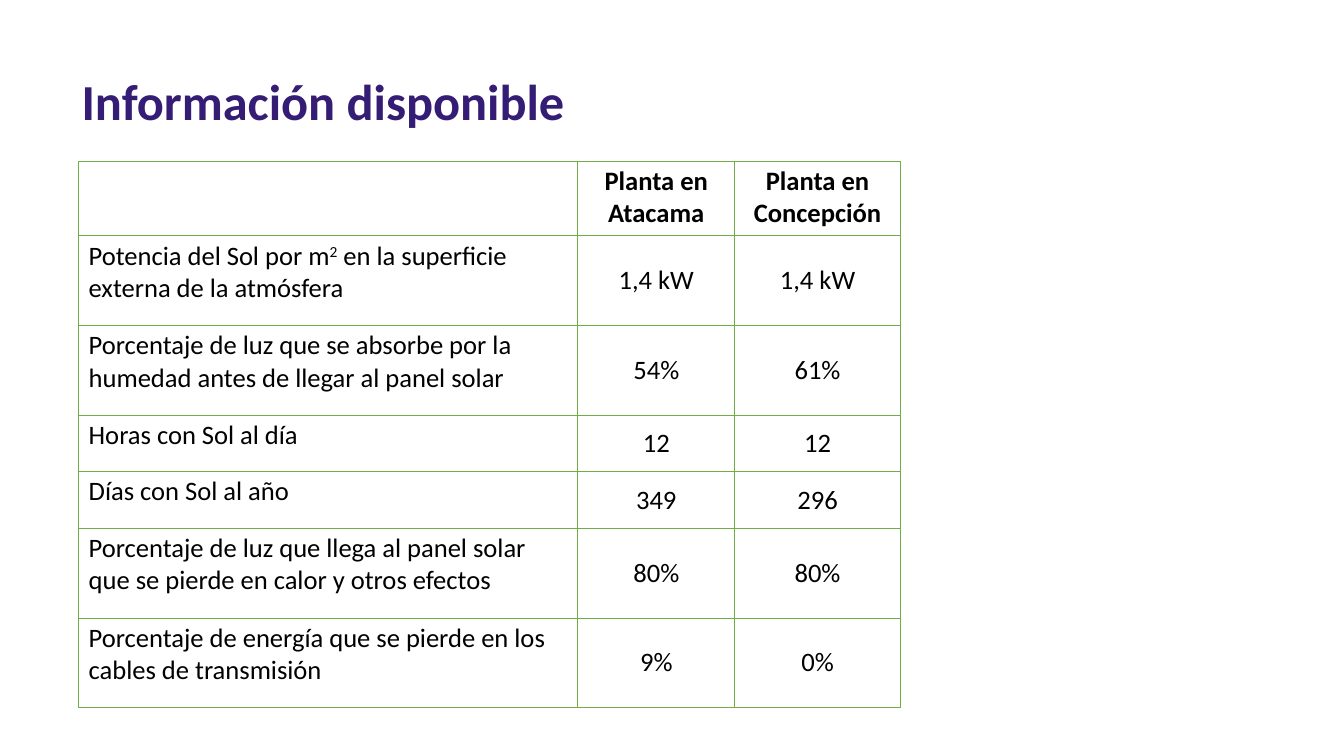
from dataclasses import dataclass

import lxml.etree
import pptx
import pptx.dml.color
import pptx.enum.text
import pptx.oxml.ns
import pptx.util

SLIDE_WIDTH = pptx.util.Inches(13.33)
SLIDE_HEIGHT = pptx.util.Inches(7.5)


@dataclass(frozen=True)
class Theme:
    font: str = "Calibri"
    title_color: str = "351C75"
    text_color: str = "000000"
    border_color: str = "70AD47"
    title_size: float = 36
    table_size: float = 19
    border_width: float = 0.75


THEME = Theme()

# Shares of the slide, in percent
TITLE_BOX = (5.33, 8.67, 64.43, 9.47)
TABLE_LEFT, TABLE_TOP = 5.85, 21.33
COLUMN_WIDTHS = (37.13, 11.7, 12.3)
HEADER_HEIGHT, ONE_LINE, TWO_LINES = 9.87, 7.47, 11.87

PLANTS = ("Planta en Atacama", "Planta en Concepción")
SUPERSCRIPT = "^"  # marks a run to be raised
FACTS = (
    (TWO_LINES, ("Potencia del Sol por m", "^2",
                 " en la superficie externa de la atmósfera"), "1,4 kW", "1,4 kW"),
    (TWO_LINES, ("Porcentaje de luz que se absorbe por la humedad "
                 "antes de llegar al panel solar",), "54%", "61%"),
    (ONE_LINE, ("Horas con Sol al día",), "12", "12"),
    (ONE_LINE, ("Días con Sol al año",), "349", "296"),
    (TWO_LINES, ("Porcentaje de luz que llega al panel solar "
                 "que se pierde en calor y otros efectos",), "80%", "80%"),
    (TWO_LINES, ("Porcentaje de energía que se pierde en los "
                 "cables de transmisión",), "9%", "0%"),
)


def across(percent):
    return round(SLIDE_WIDTH * percent / 100)


def down(percent):
    return round(SLIDE_HEIGHT * percent / 100)


def add_run(paragraph, text, size, color, bold=False):
    run = paragraph.add_run()
    run.text = text.removeprefix(SUPERSCRIPT)
    run.font.name = THEME.font
    run.font.size = pptx.util.Pt(size)
    run.font.bold = bold
    run.font.color.rgb = pptx.dml.color.RGBColor.from_string(color)
    if text.startswith(SUPERSCRIPT):
        run.font._element.set("baseline", "30000")


def add_title(slide, text):
    left, top, width, height = TITLE_BOX
    title = slide.shapes.add_textbox(across(left), down(top), across(width), down(height))
    title.text_frame.word_wrap = True
    add_run(title.text_frame.paragraphs[0], text, THEME.title_size, THEME.title_color, bold=True)


def draw_borders(cell):
    """Outline all four sides; border elements must precede the cell fill."""
    properties = cell._tc.get_or_add_tcPr()
    qn = pptx.oxml.ns.qn
    for position, side in enumerate(("lnL", "lnR", "lnT", "lnB")):
        border = lxml.etree.Element(qn(f"a:{side}"), w=str(pptx.util.Pt(THEME.border_width)))
        fill = lxml.etree.SubElement(border, qn("a:solidFill"))
        lxml.etree.SubElement(fill, qn("a:srgbClr"), val=THEME.border_color)
        properties.insert(position, border)


def fill_cell(cell, texts, centred=False, middle=False, bold=False):
    cell.fill.background()
    draw_borders(cell)
    cell.margin_left = cell.margin_right = pptx.util.Inches(0.1)
    cell.margin_top = cell.margin_bottom = pptx.util.Inches(0.04)
    anchors = pptx.enum.text.MSO_ANCHOR
    cell.vertical_anchor = anchors.MIDDLE if middle else anchors.TOP
    paragraph = cell.text_frame.paragraphs[0]
    if centred:
        paragraph.alignment = pptx.enum.text.PP_ALIGN.CENTER
    for text in texts:
        add_run(paragraph, text, THEME.table_size, THEME.text_color, bold)


def add_facts_table(slide):
    heights = [HEADER_HEIGHT] + [fact[0] for fact in FACTS]
    table = slide.shapes.add_table(
        len(heights), len(COLUMN_WIDTHS), across(TABLE_LEFT), down(TABLE_TOP),
        across(sum(COLUMN_WIDTHS)), down(sum(heights))).table
    table.first_row = table.horz_banding = False
    for column, width in zip(table.columns, COLUMN_WIDTHS):
        column.width = across(width)
    for row, height in zip(table.rows, heights):
        row.height = down(height)

    fill_cell(table.cell(0, 0), ())
    for column, plant in enumerate(PLANTS, 1):
        fill_cell(table.cell(0, column), (plant,), centred=True, bold=True)
    for row, (_, label, *values) in enumerate(FACTS, 1):
        fill_cell(table.cell(row, 0), label)
        for column, value in enumerate(values, 1):
            fill_cell(table.cell(row, column), (value,), centred=True, middle=True)


def main():
    presentation = pptx.Presentation()
    presentation.slide_width = SLIDE_WIDTH
    presentation.slide_height = SLIDE_HEIGHT
    slide = presentation.slides.add_slide(presentation.slide_layouts[6])
    add_title(slide, "Información disponible")
    add_facts_table(slide)
    presentation.save("out.pptx")


if __name__ == "__main__":
    main()
